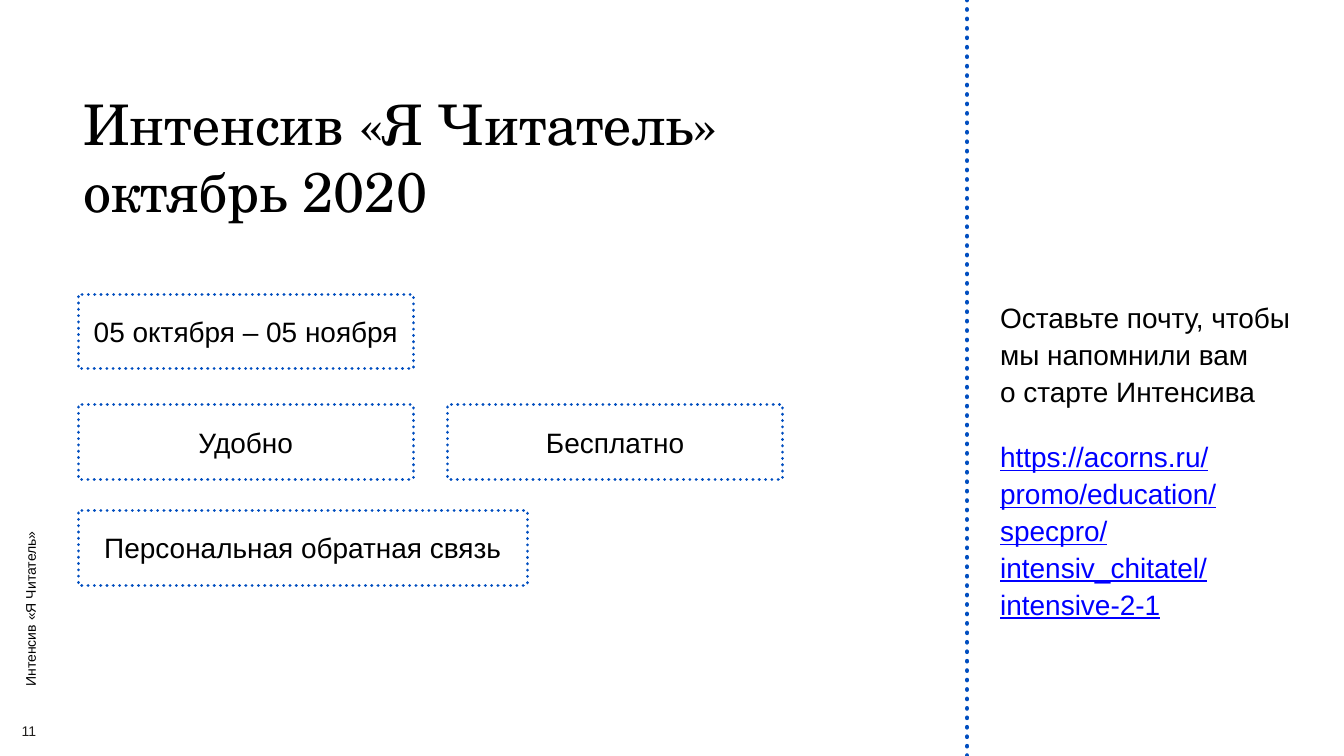
from pptx import Presentation
from pptx.dml.color import RGBColor
from pptx.enum import dml, shapes, text
from pptx.util import Pt
from lxml import etree

BLUE = "004EC0"
LEFT = 111.6
CARD = 106.56
NAME = "Интенсив «Я Читатель»"


def color(code):
    return RGBColor.from_string(code)


def style(para, size, code="000000", font="Arial"):
    for run in para.runs:
        run.font.size = Pt(size)
        run.font.name = font
        run.font.bold = False
        run.font.color.rgb = color(code)


def place(shape, left, top, width, height):
    shape.left, shape.top = Pt(left), Pt(top)
    shape.width, shape.height = Pt(width), Pt(height)


def inset(frame, size):
    frame.margin_left = frame.margin_right = Pt(size)
    frame.margin_top = frame.margin_bottom = Pt(size)


def dot(line, width):
    line.color.rgb = color(BLUE)
    line.width = Pt(width)
    line.dash_style = dml.MSO_LINE.ROUND_DOT


def rounded(shape):
    shape.line._get_or_add_ln().set("cap", "rnd")


def rule(slide, left, height):
    line = slide.shapes.add_connector(
        shapes.MSO_CONNECTOR.STRAIGHT, Pt(left), Pt(0), Pt(left), Pt(height))
    dot(line.line, 6.75)
    rounded(line)
    etree.SubElement(
        line._element.spPr,
        "{http://schemas.openxmlformats.org/drawingml/2006/main}effectLst")


def label(slide, words, box, size, code="000000", align=text.PP_ALIGN.CENTER):
    shape = slide.shapes.add_textbox(*map(Pt, box))
    frame = shape.text_frame
    frame.word_wrap = True
    frame.text = words
    para = frame.paragraphs[0]
    para.alignment = align
    style(para, size, code)
    return shape


def card(slide, words, left, top, width):
    rect = slide.shapes.add_shape(
        shapes.MSO_SHAPE.RECTANGLE, Pt(left), Pt(top), Pt(width), Pt(CARD))
    rect.shadow.inherit = False
    rect.fill.background()
    dot(rect.line, 4.5)
    rounded(rect)
    label(slide, words, (left, top + 25.6, width, 55.4), 40)


def head(slide, words):
    title = slide.shapes.title
    place(title, LEFT, 124.56, 1093.68, 196.56)
    frame = title.text_frame
    frame.text = words
    frame.word_wrap = True
    frame.auto_size = text.MSO_AUTO_SIZE.NONE
    frame.vertical_anchor = text.MSO_ANCHOR.TOP
    para = frame.paragraphs[0]
    para.alignment = text.PP_ALIGN.LEFT
    para.line_spacing = 1.0
    para.space_before = Pt(0)
    style(para, 80, font="TeX Gyre Schola")


def body(slide, words, link):
    shape = slide.placeholders[1]
    place(shape, 1424.88, 420.48, 446.4, 479.52)
    frame = shape.text_frame
    frame.text = words + "\n" + link
    frame.word_wrap = True
    frame.auto_size = text.MSO_AUTO_SIZE.NONE
    frame.vertical_anchor = text.MSO_ANCHOR.TOP
    inset(frame, 4)
    for para, code in zip(frame.paragraphs, ("000000", "0000FF")):
        para.alignment = text.PP_ALIGN.LEFT
        para.line_spacing = 1.1
        para.space_before = Pt(40)
        style(para, 40, code)
        props = para._p.get_or_add_pPr()
        props.set("marL", "0")
        props.set("indent", "0")
        etree.SubElement(
            props, "{http://schemas.openxmlformats.org/drawingml/2006/main}buNone")
    for run in frame.paragraphs[1].runs:
        run.font.underline = True


def main():
    deck = Presentation()
    deck.slide_width, deck.slide_height = Pt(1920.24), Pt(1080)
    slide = deck.slides.add_slide(deck.slide_layouts[1])

    rule(slide, 1381.68, 1080)
    side = label(slide, NAME, (-436.32, 492.48, 959.76, 31.68),
                 20, align=text.PP_ALIGN.LEFT)
    side.rotation = 270

    head(slide, NAME + " октябрь 2020")
    body(slide, "Оставьте почту, чтобы мы напомнили вам \vо старте Интенсива",
         "https://acorns.ru/\vpromo/education/\vspecpro/\vintensiv_chitatel/\vintensive-2-1")

    for words, left, top, width in (
            ("05 октября – 05 ноября", LEFT, 420.48, 478.8),
            ("Бесплатно", 639.36, 578.16, 478.8),
            ("Удобно", LEFT, 578.16, 478.8),
            ("Персональная обратная связь", LEFT, 729.36, 641.52)):
        card(slide, words, left, top, width)

    page = label(slide, "11", (25.92, 1027.44, 30.96, 30.24), 20, "201E1C")
    page.text_frame.word_wrap = False
    inset(page.text_frame, 4)

    deck.save("out.pptx")


if __name__ == "__main__":
    main()
